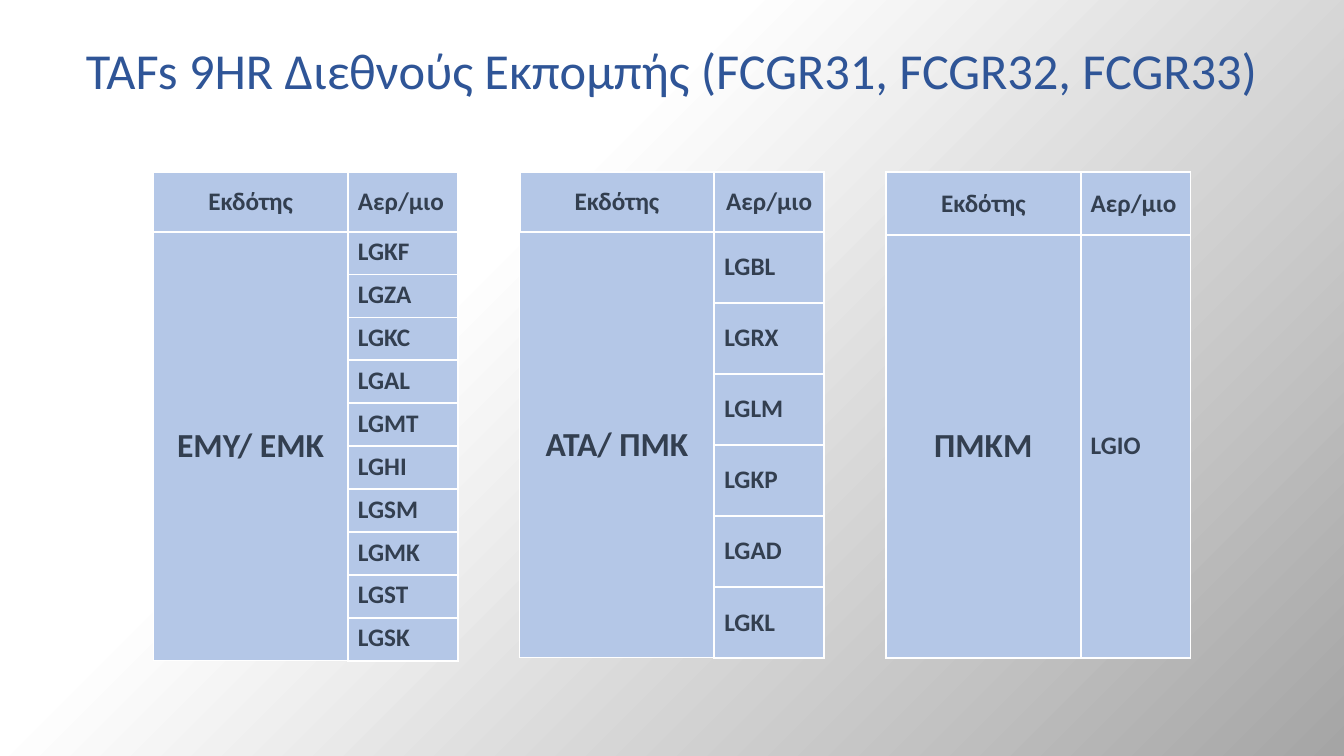
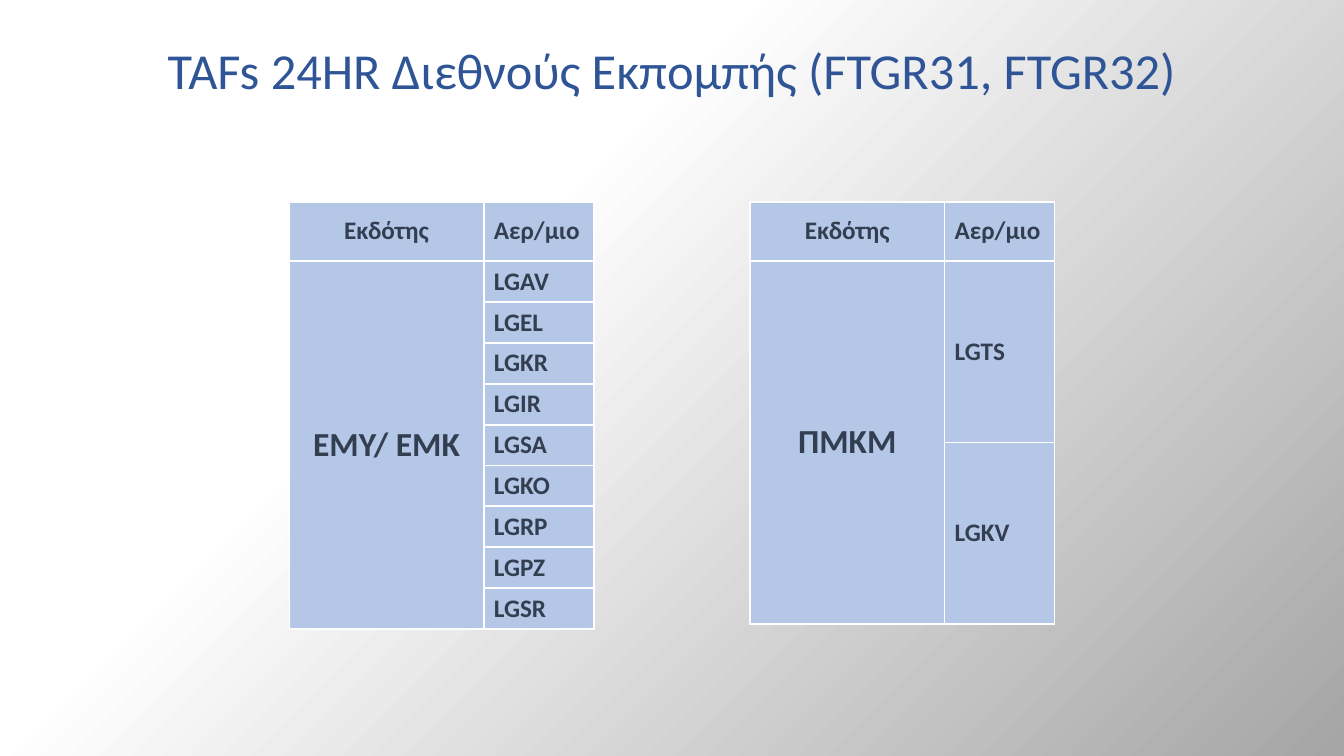
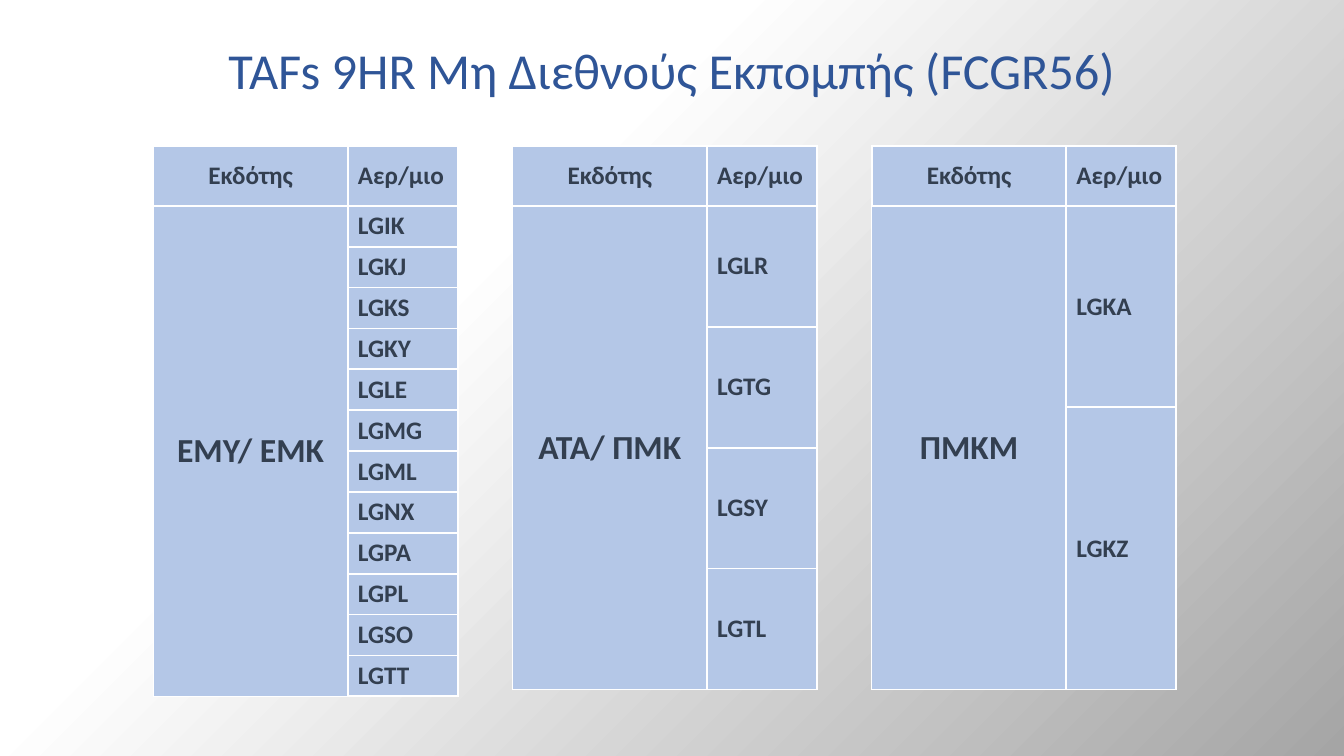
from dataclasses import dataclass

from pptx import Presentation
from pptx.dml.color import RGBColor
from pptx.enum.text import MSO_ANCHOR, MSO_AUTO_SIZE, PP_ALIGN
from pptx.oxml import parse_xml
from pptx.oxml.ns import nsdecls, qn
from pptx.util import Pt


@dataclass(frozen=True)
class Theme:
    """Colours, type sizes and measures shared by all slides, lengths in points."""
    font: str = "Calibri"
    title_colour: str = "2F5597"
    text_colour: str = "333F50"
    cell_fill: str = "B4C7E7"
    border_colour: str = "FFFFFF"
    backdrop_stops: tuple = ((0, "FFFFFF"), (35, "FFFFFF"), (100, "A5A5A5"))
    title_size: float = 36
    issuer_size: float = 24
    cell_size: float = 18
    thick_line: float = 1.5
    thin_line: float = 1
    page_width: float = 960
    page_height: float = 540
    title_height: float = 104.4
    columns: tuple = (139, 78.5)


THEME = Theme()


@dataclass(frozen=True)
class Roster:
    """One issuer with its airports and the proportions of its table."""
    issuer: str
    airports: str
    height: float
    header_height: float = 42.5
    anchor: MSO_ANCHOR = MSO_ANCHOR.MIDDLE
    airport_heading: PP_ALIGN = PP_ALIGN.LEFT
    shares: tuple = ()


def paint_backdrop(master):
    """Give the slide master a gradient that spreads from the top left corner."""
    master.background.fill.gradient()
    gradient = master.element.find(".//" + qn("a:gradFill"))
    stops = "".join(
        f'<a:gs pos="{place * 1000}"><a:srgbClr val="{colour}"/></a:gs>'
        for place, colour in THEME.backdrop_stops
    )
    gradient.getparent().replace(gradient, parse_xml(
        f'<a:gradFill {nsdecls("a")} rotWithShape="1"><a:gsLst>{stops}</a:gsLst>'
        '<a:path path="circle"><a:fillToRect r="100000" b="100000"/></a:path>'
        '<a:tileRect l="-100000" t="-100000"/></a:gradFill>'
    ))


def style_paragraph(para, size, colour, align, bold=False):
    """Set the font and alignment of a paragraph."""
    para.alignment = align
    para.font.name = THEME.font
    para.font.size = Pt(size)
    para.font.bold = bold
    para.font.color.rgb = RGBColor.from_string(colour)


def place_title(page, text):
    """Fill the title placeholder across the top of the page."""
    title = page.shapes.title
    title.left, title.top = Pt(0), Pt(0)
    title.width, title.height = Pt(THEME.page_width), Pt(THEME.title_height)
    frame = title.text_frame
    frame.text = text
    frame.word_wrap = True
    frame.auto_size = MSO_AUTO_SIZE.NONE
    frame.vertical_anchor = MSO_ANCHOR.MIDDLE
    para = frame.paragraphs[0]
    para.line_spacing = 0.9
    style_paragraph(para, THEME.title_size, THEME.title_colour, PP_ALIGN.CENTER)


def format_cell(cell, anchor, is_issuer=False):
    """Fill a cell and draw its four borders."""
    cell.vertical_anchor = anchor
    cell.fill.solid()
    cell.fill.fore_color.rgb = RGBColor.from_string(THEME.cell_fill)
    outer = THEME.thin_line if is_issuer else THEME.thick_line
    widths = {"lnL": outer, "lnR": THEME.thick_line, "lnT": THEME.thick_line, "lnB": outer}
    properties = cell._tc.get_or_add_tcPr()
    for position, (side, width) in enumerate(widths.items()):
        properties.insert(position, parse_xml(
            f'<a:{side} {nsdecls("a")} w="{Pt(width)}"><a:solidFill>'
            f'<a:srgbClr val="{THEME.border_colour}"/></a:solidFill></a:{side}>'
        ))


def write_cell(cell, text, size, align):
    """Write bold text in a cell."""
    cell.text = text
    style_paragraph(cell.text_frame.paragraphs[0], size, THEME.text_colour, align, bold=True)


def add_roster(page, left, top, roster):
    """Build the table of one issuer at the given corner."""
    airports = roster.airports.split()
    shares = roster.shares or (1,) * len(airports)
    body_height = roster.height - roster.header_height
    heights = [roster.header_height] + [body_height * share / sum(shares) for share in shares]
    table = page.shapes.add_table(
        len(heights), 2, Pt(left), Pt(top), Pt(sum(THEME.columns)), Pt(roster.height)
    ).table
    table.first_row = table.horz_banding = False
    for column, width in zip(table.columns, THEME.columns):
        column.width = Pt(width)
    for row, height in zip(table.rows, heights):
        row.height = Pt(height)

    write_cell(table.cell(0, 0), "Εκδότης", THEME.cell_size, PP_ALIGN.CENTER)
    write_cell(table.cell(0, 1), "Αερ/μιο", THEME.cell_size, roster.airport_heading)
    for column in range(2):
        format_cell(table.cell(0, column), MSO_ANCHOR.MIDDLE)
    for index, airport in enumerate(airports, start=1):
        write_cell(table.cell(index, 1), airport, THEME.cell_size, PP_ALIGN.LEFT)
        format_cell(table.cell(index, 1), roster.anchor)
        format_cell(table.cell(index, 0), MSO_ANCHOR.MIDDLE, is_issuer=True)
    issuer = table.cell(1, 0)
    if len(airports) > 1:
        issuer.merge(table.cell(len(airports), 0))
    write_cell(issuer, roster.issuer, THEME.issuer_size, PP_ALIGN.CENTER)


def add_roster_slide(deck, title, left, top, pitch, rosters):
    """Add a titled slide with a row of evenly spaced tables."""
    page = deck.slides.add_slide(deck.slide_layouts[5])
    place_title(page, title)
    for index, roster in enumerate(rosters):
        add_roster(page, left + index * pitch, top, roster)


def main():
    """Build the deck and save it."""
    deck = Presentation()
    deck.slide_width, deck.slide_height = Pt(THEME.page_width), Pt(THEME.page_height)
    paint_backdrop(deck.slide_master)
    add_roster_slide(
        deck, "TAFs 9HR Διεθνούς Εκπομπής (FCGR31, FCGR32, FCGR33)", 109.5, 123, 261.7,
        [
            Roster("ΕΜΥ/ ΕΜΚ", "LGKF LGZA LGKC LGAL LGMT LGHI LGSM LGMK LGST LGSK",
                   349, anchor=MSO_ANCHOR.TOP),
            Roster("ΑΤΑ/ ΠΜΚ", "LGBL LGRX LGLM LGKP LGAD LGKL",
                   347, airport_heading=PP_ALIGN.CENTER),
            Roster("ΠΜΚΜ", "LGIO", 347, header_height=44.6),
        ],
    )
    add_roster_slide(
        deck, "TAFs 24HR Διεθνούς Εκπομπής (FTGR31, FTGR32)", 206.6, 144, 329.1,
        [
            Roster("ΕΜΥ/ ΕΜΚ", "LGAV LGEL LGKR LGIR LGSA LGKO LGRP LGPZ LGSR",
                   301.7, anchor=MSO_ANCHOR.TOP),
            Roster("ΠΜΚΜ", "LGTS LGKV", 301.7),
        ],
    )
    add_roster_slide(
        deck, "TAFs 9HR Μη Διεθνούς Εκπομπής (FCGR56)", 109.5, 104.5, 256.6,
        [
            Roster("ΕΜΥ/ ΕΜΚ",
                   "LGIK LGKJ LGKS LGKY LGLE LGMG LGML LGNX LGPA LGPL LGSO LGTT",
                   388, anchor=MSO_ANCHOR.TOP),
            Roster("ΑΤΑ/ ΠΜΚ", "LGLR LGTG LGSY LGTL", 388),
            Roster("ΠΜΚΜ", "LGKA LGKZ", 388, shares=(5, 7)),
        ],
    )
    deck.save("out.pptx")


if __name__ == "__main__":
    main()
